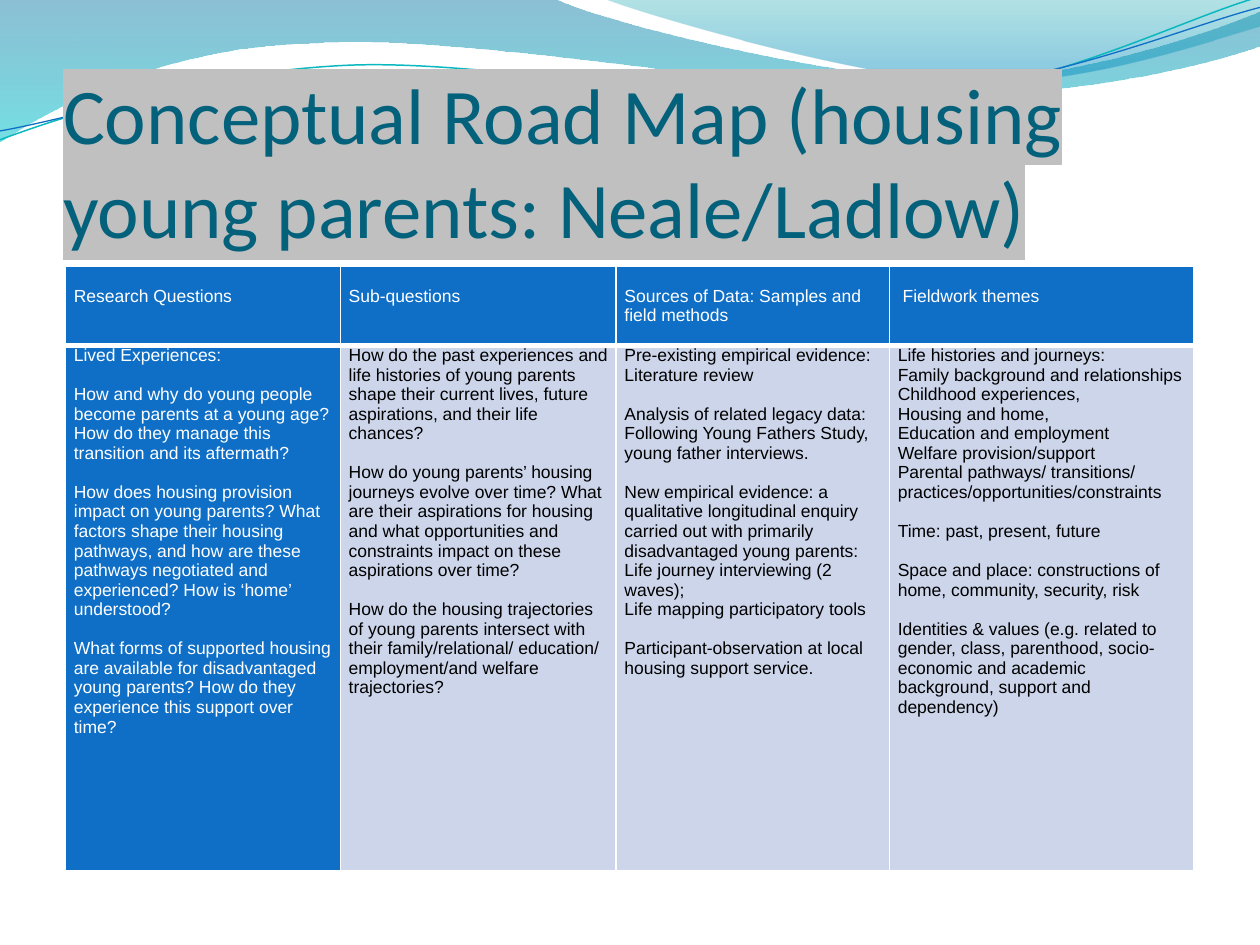
from dataclasses import dataclass
from itertools import chain
from typing import NamedTuple, Optional

from lxml.etree import SubElement
from pptx import Presentation
from pptx.dml.color import RGBColor as Rgb
from pptx.enum.text import MSO_ANCHOR as Anchor, MSO_AUTO_SIZE as AutoSize, PP_ALIGN as Align
from pptx.oxml.ns import qn
from pptx.util import Cm, Pt


@dataclass(frozen=True)
class Theme:
    title_font: str = "Calibri"
    table_font: str = "Arial"
    title_size: float = 45
    table_size: float = 10
    block_gap: float = 11.2
    border_width: float = 1
    header_rule: float = 3
    title: str = "04617B"
    highlight: str = "C0C0C0"
    accent: str = "0F6FC6"
    body_fill: str = "CCD5EA"
    light: str = "FFFFFF"
    dark: str = "000000"
    curve: str = "0AB8BF"


THEME = Theme()
Point = tuple[float, float]


class Stop(NamedTuple):
    position: float
    color: str
    opacity: int  # percent


@dataclass(frozen=True)
class Wave:
    """Outline in cm: a segment is one point (straight) or three (Bezier)."""
    start: Point
    segments: list[list[Point]]
    stops: Optional[list[Stop]] = None
    line: Optional[str] = None
    width: float = 0
    rotation: float = 0


@dataclass(frozen=True)
class Column:
    width: float
    heading: str
    blocks: list[list[str]]


WAVES = [
    Wave((0, 0), [
        [(11.18, -0.03)],
        [(12.09, 0.43), (16.87, 1.6), (19.25, 1.6)],
        [(21.67, 1.6), (24.33, 0.66), (25.4, 0.23)],
        [(25.43, 0.91)],
        [(24.97, 1.12), (22.1, 1.93), (18.95, 1.91)],
        [(15.8, 1.91), (9.7, 0.71), (6.53, 0.86)],
        [(3.28, 0.91), (1.17, 2.11), (-0.03, 2.87)],
        [(0, 0)],
    ], stops=[Stop(0, "0074A1", 45), Stop(1, "00C6CF", 55)]),
    Wave((12.17, -0.03), [
        [(12.93, 0.28), (17.32, 1.57), (19.53, 1.65)],
        [(21.74, 1.75), (24.41, 0.81), (25.4, 0.53)],
        [(25.4, 0)],
        [(12.17, -0.03)],
    ], stops=[Stop(0, "00A1A9", 30), Stop(0.8, "008BBF", 45)]),
    Wave((-0.05, 2.22), [
        [(1.19, 1.82), (4.02, 1.04), (7.05, 1.05)],
        [(10.05, 1.07), (15.02, 2.37), (18.08, 2.29)],
        [(21.13, 2.2), (23.86, 0.91), (25.4, 0.55)],
    ], line=THEME.curve, width=0.85, rotation=357.3),
    Wave((-0.04, 2.04), [
        [(1.16, 1.9), (4.17, 1.15), (7.2, 1.16)],
        [(10.25, 1.18), (15.13, 2.25), (18.19, 2.16)],
        [(21.22, 2.1), (23.93, 1.06), (25.45, 0.75)],
    ], line=THEME.accent, width=0.75, rotation=357.3),
]

COLUMNS = [
    Column(5.54, "Research Questions", [
        ["Lived Experiences:"],
        ["How and why do young people become parents at a young age? How do they manage this "
         "transition and its aftermath?"],
        ["How does housing provision impact on young parents? What factors shape their housing "
         "pathways, and how are these pathways negotiated and experienced? How is ‘home’ understood?"],
        ["What forms of supported housing are available for disadvantaged young parents? How do "
         "they experience this support over time?"],
    ]),
    Column(5.56, "Sub-questions", [
        ["How do the past experiences and life histories of young parents shape their current "
         "lives, future aspirations, and their life chances?"],
        ["How do young parents’ housing journeys evolve over time? What are their aspirations for "
         "housing and what opportunities and constraints impact on these aspirations over time?"],
        ["How do the housing trajectories of young parents intersect with their "
         "family/relational/ education/ employment/and welfare trajectories?"],
    ]),
    Column(5.51, "Sources of Data: Samples and field methods", [
        ["Pre-existing empirical evidence: Literature review"],
        ["Analysis of related legacy data: Following Young Fathers Study, young father interviews."],
        ["New empirical evidence: a qualitative longitudinal enquiry carried out with primarily "
         "disadvantaged young parents:",
         "Life journey interviewing (2 waves);",
         "Life mapping participatory tools"],
        ["Participant-observation at local housing support service."],
    ]),
    Column(6.14, " Fieldwork themes", [
        ["Life histories and journeys:", "Family background and relationships",
         "Childhood experiences,", "Housing and home,", "Education and employment",
         "Welfare provision/support",
         "Parental pathways/ transitions/ practices/opportunities/constraints"],
        ["Time: past, present, future"],
        ["Space and place: constructions of home, community, security, risk"],
        ["Identities & values (e.g. related to gender, class, parenthood, socio-economic and "
         "academic background, support and dependency)"],
    ]),
]


def bend(ribbon, segments: list[list[Point]]) -> None:
    """Turn each run of three straight steps into one Bezier curve."""
    steps = iter(ribbon.element.xpath(".//a:path/a:lnTo"))
    for segment in segments:
        first, *others = [next(steps) for _ in segment]
        if others:
            first.tag  # the curve takes the place of the first step
            curve = SubElement(first.getparent(), qn("a:cubicBezTo"))
            first.addprevious(curve)
            for step in (first, *others):
                curve.append(step[0])
                step.getparent().remove(step)


def draw_wave(slide, wave: Wave) -> None:
    builder = slide.shapes.build_freeform(Cm(wave.start[0]), Cm(wave.start[1]))
    outline = [(Cm(x), Cm(y)) for x, y in chain.from_iterable(wave.segments)]
    builder.add_line_segments(outline, close=wave.stops is not None)
    ribbon = builder.convert_to_shape()
    bend(ribbon, wave.segments)
    ribbon.rotation = wave.rotation
    ribbon.shadow.inherit = False
    if wave.stops is None:
        ribbon.fill.background()
        ribbon.line.color.rgb = Rgb.from_string(wave.line)
        ribbon.line.width = Pt(wave.width)
        return
    ribbon.line.fill.background()
    ribbon.fill.gradient()
    ribbon.fill.gradient_angle = 270
    for target, stop in zip(ribbon.fill.gradient_stops, wave.stops):
        target.position = stop.position
        target.color.rgb = Rgb.from_string(stop.color)
    for color, stop in zip(ribbon.element.xpath(".//a:gs/a:srgbClr"), wave.stops):
        SubElement(color, qn("a:alpha"), val=str(stop.opacity * 1000))


def add_run(paragraph, text: str, font: str, size: float, color: str):
    run = paragraph.add_run()
    run.text = text
    run.font.name, run.font.size, run.font.bold = font, Pt(size), False
    run.font.color.rgb = Rgb.from_string(color)
    return run


def fill_title(slide, text: str) -> None:
    title = slide.shapes.title
    title.left, title.top, title.width, title.height = Cm(1.27), Cm(1.95), Cm(22.86), Cm(3.18)
    frame = title.text_frame
    frame.auto_size, frame.word_wrap = AutoSize.NONE, True
    frame.vertical_anchor = Anchor.BOTTOM
    frame.margin_left = frame.margin_right = frame.margin_bottom = 0
    frame.margin_top = Cm(0.13)
    paragraph = frame.paragraphs[0]
    paragraph.alignment = Align.LEFT
    run = add_run(paragraph, text, THEME.title_font, THEME.title_size, THEME.title)
    properties = run.font.fill._xPr
    highlight = SubElement(properties, qn("a:highlight"))
    SubElement(highlight, qn("a:srgbClr"), val=THEME.highlight)
    properties.find(qn("a:solidFill")).addnext(highlight)
    slide.shapes.element.append(title.element)  # in front of the waves


def fill_cell(cell, blocks: list[list[str]], fill: str, color: str, top: float = 0,
              rule: float = THEME.border_width) -> None:
    cell.margin_left = cell.margin_right = Cm(0.17)
    cell.margin_top, cell.margin_bottom = Cm(top), 0
    # Borders come before the fill in the cell properties
    properties = cell._tc.get_or_add_tcPr()
    for side in ("lnL", "lnR", "lnT", "lnB"):
        width = Pt(rule if side == "lnB" else THEME.border_width)
        border = SubElement(properties, qn(f"a:{side}"), w=str(width))
        SubElement(SubElement(border, qn("a:solidFill")), qn("a:srgbClr"), val=THEME.light)
    cell.fill.solid()
    cell.fill.fore_color.rgb = Rgb.from_string(fill)
    paragraph = None
    for block in blocks:
        for index, line in enumerate(block):
            first = paragraph is None
            paragraph = cell.text_frame.paragraphs[0] if first else cell.text_frame.add_paragraph()
            paragraph.space_before = Pt(THEME.block_gap if index == 0 and not first else 0)
            add_run(paragraph, line, THEME.table_font, THEME.table_size, color)


def draw_table(slide, columns: list[Column]) -> None:
    width = sum(column.width for column in columns)
    table = slide.shapes.add_table(2, len(columns), Cm(1.32), Cm(5.37), Cm(width), Cm(12.19)).table
    table.first_row = table.horz_banding = False
    table.rows[0].height, table.rows[1].height = Cm(1.6), Cm(10.59)
    for index, column in enumerate(columns):
        table.columns[index].width = Cm(column.width)
        fill_cell(table.cell(0, index), [[column.heading]], THEME.accent, THEME.light,
                  top=0.4, rule=THEME.header_rule)
        fill, color = (THEME.accent, THEME.light) if index == 0 else (THEME.body_fill, THEME.dark)
        fill_cell(table.cell(1, index), column.blocks, fill, color)


def main() -> None:
    deck = Presentation()
    deck.slide_width, deck.slide_height = Cm(25.4), Cm(19.05)
    slide = deck.slides.add_slide(deck.slide_layouts[5])
    for wave in WAVES:
        draw_wave(slide, wave)
    fill_title(slide, "Conceptual Road Map (housing young parents: Neale/Ladlow)")
    draw_table(slide, COLUMNS)
    deck.save("out.pptx")


if __name__ == "__main__":
    main()
